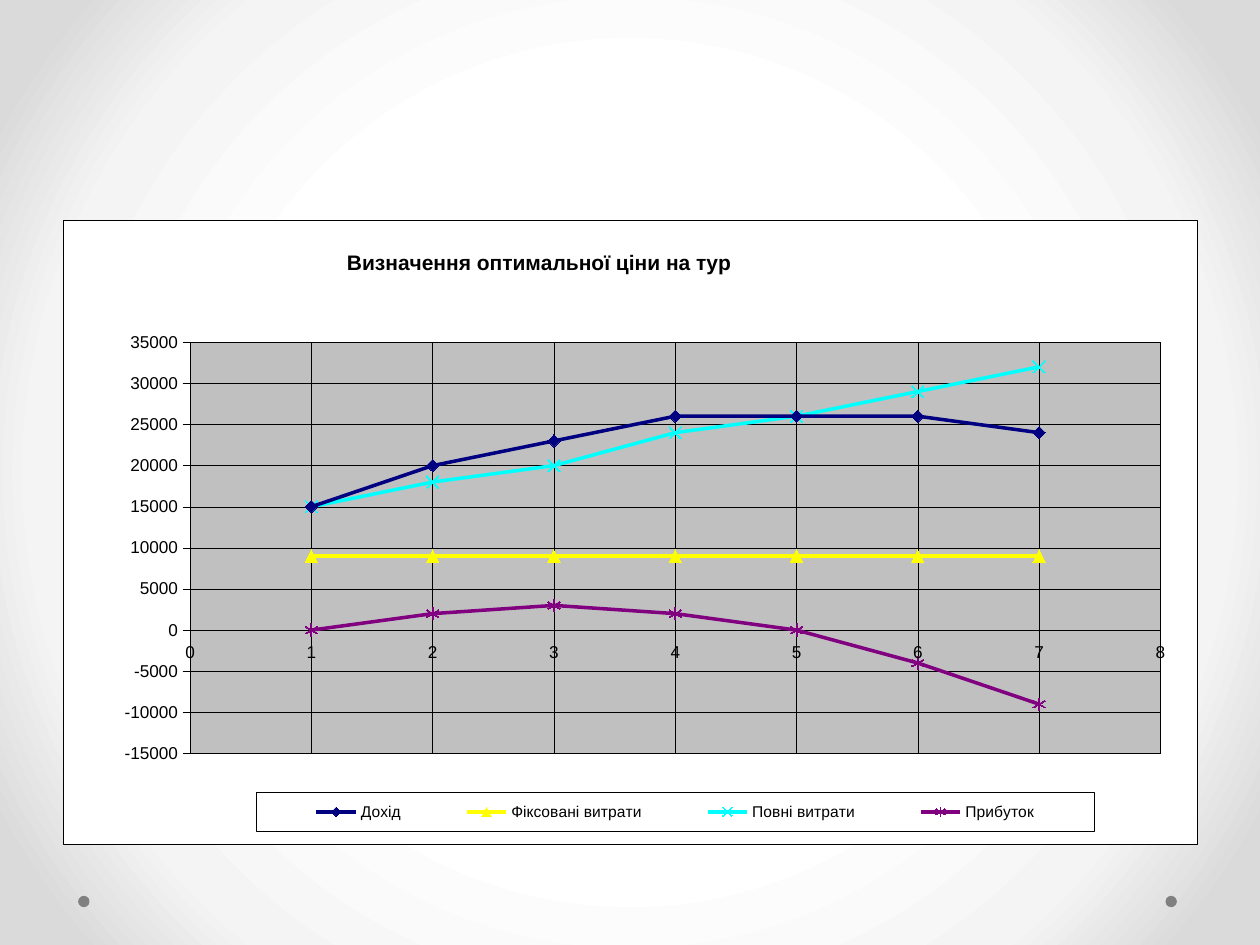
from pptx import Presentation
from pptx.chart.data import XyChartData
from pptx.dml.color import RGBColor
from pptx.enum.chart import XL_CHART_TYPE as ChartType
from pptx.enum.chart import XL_LEGEND_POSITION as LegendPosition
from pptx.enum.chart import XL_MARKER_STYLE as Marker
from pptx.enum.chart import XL_TICK_MARK as TickMark
from pptx.enum.shapes import MSO_SHAPE as ShapeKind
from pptx.oxml import parse_xml
from pptx.oxml.ns import nsdecls, qn
from pptx.util import Inches, Pt

FONT = "Arial"
BLACK = "000000"
BACKGROUND_STOPS = [(50, "FFFFFF"), (76, "F4F4F4"), (92, "DADADA")]
SERIES = [
    ("Дохід", "000080", Marker.DIAMOND, True,
     [15000, 20000, 23000, 26000, 26000, 26000, 24000]),
    ("Фіксовані витрати", "FFFF00", Marker.TRIANGLE, True, [9000] * 7),
    ("Повні витрати", "00FFFF", Marker.X, False,
     [15000, 18000, 20000, 24000, 26000, 29000, 32000]),
    ("Прибуток", "800080", Marker.STAR, False,
     [0, 2000, 3000, 2000, 0, -4000, -9000]),
]


def color(value):
    """Turn a hex string into a colour."""
    return RGBColor.from_string(value)


def format_font(font, size, bold=False, fill=BLACK):
    """Set the typeface, size, weight and colour of a font."""
    font.name = FONT
    font.size = Pt(size)
    font.bold = bold
    font.color.rgb = color(fill)


def write_text(frame, text, **style):
    """Write one formatted run into a text frame."""
    span = frame.paragraphs[0].add_run()
    span.text = text
    format_font(span.font, **style)


def format_line(line, width, fill=BLACK):
    """Set the width and colour of a line."""
    line.width = Pt(width)
    line.color.rgb = color(fill)


def set_background(page):
    """Fill the page with a circular gradient from the centre."""
    stops = "".join(
        f'<a:gs pos="{place * 1000}"><a:srgbClr val="{value}"/></a:gs>'
        for place, value in BACKGROUND_STOPS)
    page.element.cSld.insert(0, parse_xml(
        f'<p:bg {nsdecls("p", "a")}><p:bgPr><a:gradFill rotWithShape="1">'
        f'<a:gsLst>{stops}</a:gsLst><a:path path="circle">'
        '<a:fillToRect l="50000" t="50000" r="50000" b="50000"/></a:path>'
        '</a:gradFill><a:effectLst/></p:bgPr></p:bg>'))


def add_dot(page, left):
    """Add a small grey dot near the bottom edge."""
    dot = page.shapes.add_shape(
        ShapeKind.OVAL, Inches(left), Inches(7.11), Inches(0.09), Inches(0.09))
    dot.shadow.inherit = False
    dot.fill.solid()
    dot.fill.fore_color.rgb = color("808080")
    dot.line.fill.background()


def area_format(fill, border=None):
    """Build the fill and border of a chart area."""
    line = (f'<a:ln w="3175"><a:solidFill><a:srgbClr val="{border}"/>'
            '</a:solidFill></a:ln>' if border else '<a:ln><a:noFill/></a:ln>')
    return parse_xml(
        f'<c:spPr {nsdecls("c", "a")}><a:solidFill><a:srgbClr val="{fill}"/>'
        f'</a:solidFill>{line}</c:spPr>')


def place_part(part, index, x, y, width=None, height=None, inner=False):
    """Place a chart part by fractions of the chart size."""
    old = part.find(qn("c:layout"))
    if old is not None:
        part.remove(old)
    target = '<c:layoutTarget val="inner"/>' if inner else ""
    modes = '<c:xMode val="edge"/><c:yMode val="edge"/>'
    sizes = "".join(
        f'<c:{name} val="{value}"/>'
        for name, value in zip("xywh", (x, y, width, height))
        if value is not None)
    part.insert(index, parse_xml(
        f'<c:layout {nsdecls("c")}><c:manualLayout>{target}{modes}{sizes}'
        '</c:manualLayout></c:layout>'))


def format_axis(axis, low, high, step):
    """Set the scale, grid and text of an axis."""
    axis.minimum_scale, axis.maximum_scale = low, high
    axis.major_unit = step
    axis.major_tick_mark = TickMark.OUTSIDE
    axis.minor_tick_mark = TickMark.NONE
    axis.has_major_gridlines = True
    format_line(axis.major_gridlines.format.line, 0.25)
    format_line(axis.format.line, 0.25)
    format_font(axis.tick_labels.font, 9.8)
    axis.tick_labels.number_format = "General"
    axis.tick_labels.number_format_is_linked = False


def format_series(series, fill, style, solid):
    """Set the line and the markers of a series."""
    series.smooth = False
    format_line(series.format.line, 2, fill)
    marker = series.marker
    marker.style, marker.size = style, 7
    format_line(marker.format.line, 0.75, fill)
    if solid:
        marker.format.fill.solid()
        marker.format.fill.fore_color.rgb = color(fill)
    else:
        marker.format.fill.background()


def add_title(chart, text):
    """Add the chart title."""
    chart.has_title = True
    write_text(chart.chart_title.text_frame, text, size=12, bold=True)
    place_part(chart.chart_title._element, 1, 0.247, 0.04)


def add_legend(chart):
    """Add the framed legend below the plot."""
    chart.has_legend = True
    legend = chart.legend
    legend.position = LegendPosition.BOTTOM
    legend.include_in_layout = False
    format_font(legend.font, 8.9)
    place_part(legend._element, 1, 0.17, 0.917, 0.74, 0.063)
    legend._element.find(qn("c:txPr")).addprevious(area_format("FFFFFF", BLACK))


def add_price_chart(page):
    """Add the chart of income, costs and profit."""
    data = XyChartData()
    for name, _, _, _, values in SERIES:
        points = data.add_series(name)
        for x, y in enumerate(values, 1):
            points.add_data_point(x, y)
    chart = page.shapes.add_chart(
        ChartType.XY_SCATTER_LINES, Inches(0.5), Inches(1.75), Inches(9),
        Inches(4.95), data).chart
    format_font(chart.font, 9.8)
    chart.plots[0].vary_by_categories = False
    add_title(chart, "Визначення оптимальної ціни на тур")
    add_legend(chart)
    format_axis(chart.category_axis, 0, 8, 1)
    format_axis(chart.value_axis, -15000, 35000, 5000)
    for series, (_, fill, style, solid, _) in zip(chart.plots[0].series, SERIES):
        format_series(series, fill, style, solid)
    space = chart._chartSpace
    space.find(qn("c:txPr")).addprevious(area_format("FFFFFF", BLACK))
    plot_area = space.chart.plotArea
    place_part(plot_area, 0, 0.112, 0.195, 0.856, 0.66, inner=True)
    plot_area.append(area_format("C0C0C0"))


def main():
    """Build the slide and save it."""
    deck = Presentation()
    deck.slide_width, deck.slide_height = Inches(10), Inches(7.5)
    page = deck.slides.add_slide(deck.slide_layouts[6])
    set_background(page)
    for left in (9.25, 0.62):
        add_dot(page, left)
    add_price_chart(page)
    deck.save("out.pptx")


if __name__ == "__main__":
    main()
